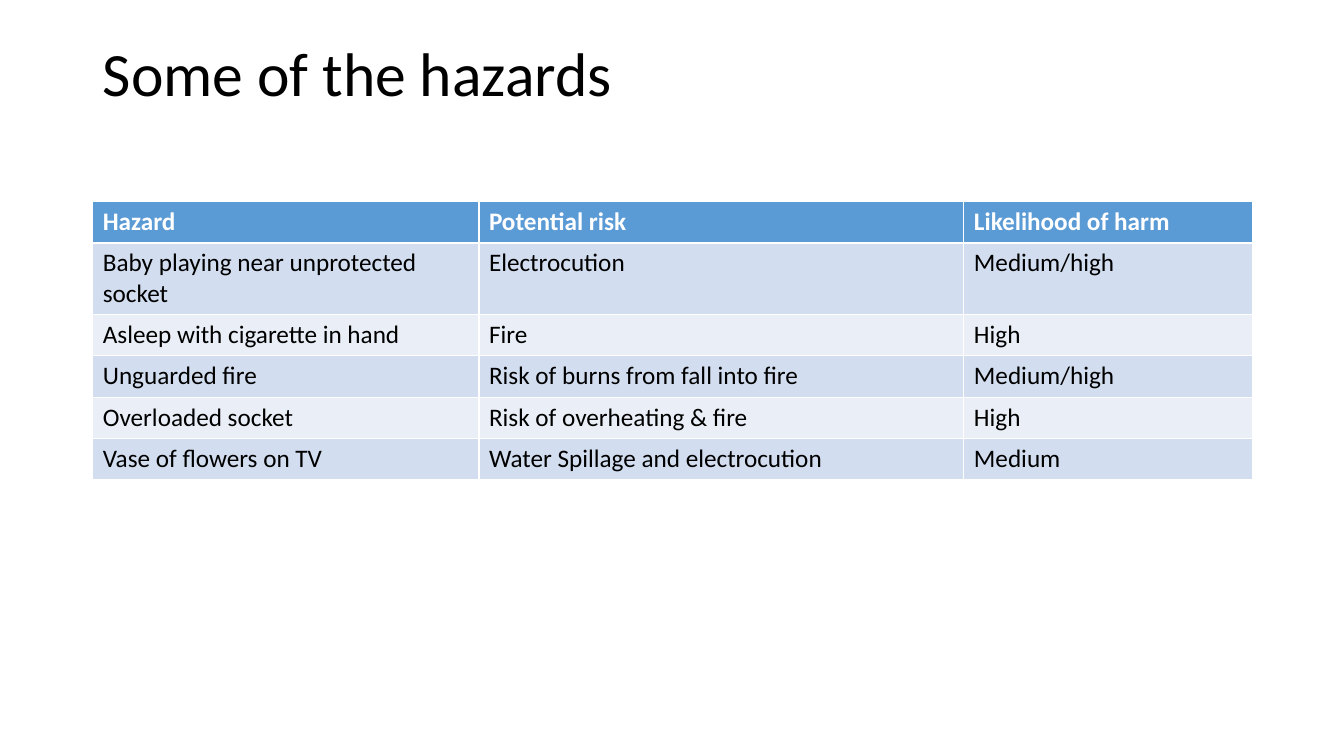
from pptx import Presentation
from pptx.dml.color import RGBColor
from pptx.enum.text import MSO_ANCHOR, MSO_AUTO_SIZE, PP_ALIGN
from pptx.util import Inches, Pt

BLACK = RGBColor(0x00, 0x00, 0x00)
WHITE = RGBColor(0xFF, 0xFF, 0xFF)
HEADER_BLUE = RGBColor(0x5B, 0x9B, 0xD5)
BAND_BLUES = (RGBColor(0xEA, 0xEF, 0xF7), RGBColor(0xD2, 0xDE, 0xEF))

TITLE_FONT = {"name": "Calibri", "size": Pt(44), "bold": False}
HEADER_FONT = {"name": "Calibri", "size": Pt(18), "bold": True}
BODY_FONT = {"name": "Calibri", "size": Pt(18), "bold": False}

COLUMN_WIDTHS = (3.83, 4.81, 2.86)
ROW_HEIGHT = 0.41
HAZARDS = (
    ("Hazard", "Potential risk", "Likelihood of harm"),
    ("Baby playing near unprotected socket", "Electrocution", "Medium/high"),
    ("Asleep with cigarette in hand", "Fire", "High"),
    ("Unguarded fire", "Risk of burns from fall into fire", "Medium/high"),
    ("Overloaded socket", "Risk of overheating & fire", "High"),
    ("Vase of flowers on TV", "Water Spillage and electrocution", "Medium"),
)


def set_attributes(target, values):
    for name, value in values.items():
        setattr(target, name, value)


def format_font(font, values, color):
    set_attributes(font, values)
    font.color.rgb = color


def place_title(slide, left, top, width, height):
    title = slide.shapes.title
    set_attributes(title, {
        "left": Inches(left), "top": Inches(top),
        "width": Inches(width), "height": Inches(height),
    })
    set_attributes(title.text_frame, {
        "word_wrap": True,
        "auto_size": MSO_AUTO_SIZE.NONE,
        "vertical_anchor": MSO_ANCHOR.MIDDLE,
    })
    paragraph = title.text_frame.paragraphs[0]
    set_attributes(paragraph, {"alignment": PP_ALIGN.LEFT, "line_spacing": 0.9})
    run = paragraph.add_run()
    run.text = "Some of the hazards"
    format_font(run.font, TITLE_FONT, BLACK)
    paragraph.add_line_break()


def fill_cell(cell, text, fill_color, font_values, font_color):
    cell.fill.solid()
    cell.fill.fore_color.rgb = fill_color
    run = cell.text_frame.paragraphs[0].add_run()
    run.text = text
    format_font(run.font, font_values, font_color)


def place_hazard_table(slide, left, top, width):
    table = slide.shapes.add_table(
        len(HAZARDS), len(COLUMN_WIDTHS), Inches(left), Inches(top),
        Inches(width), Inches(ROW_HEIGHT * len(HAZARDS)),
    ).table
    for column, share in zip(table.columns, COLUMN_WIDTHS):
        column.width = Inches(width * share / sum(COLUMN_WIDTHS))
    for row_index, texts in enumerate(HAZARDS):
        table.rows[row_index].height = Inches(ROW_HEIGHT)
        if row_index == 0:
            style = (HEADER_BLUE, HEADER_FONT, WHITE)
        else:
            style = (BAND_BLUES[row_index % 2], BODY_FONT, BLACK)
        for column_index, text in enumerate(texts):
            fill_cell(table.cell(row_index, column_index), text, *style)


def main():
    presentation = Presentation()
    presentation.slide_width = Inches(13.33)
    presentation.slide_height = Inches(7.5)
    slide = presentation.slides.add_slide(presentation.slide_layouts[5])
    place_title(slide, 0.92, 0.4, 11.5, 1.45)
    place_hazard_table(slide, 0.92, 2, 11.5)
    presentation.save("out.pptx")


if __name__ == "__main__":
    main()
